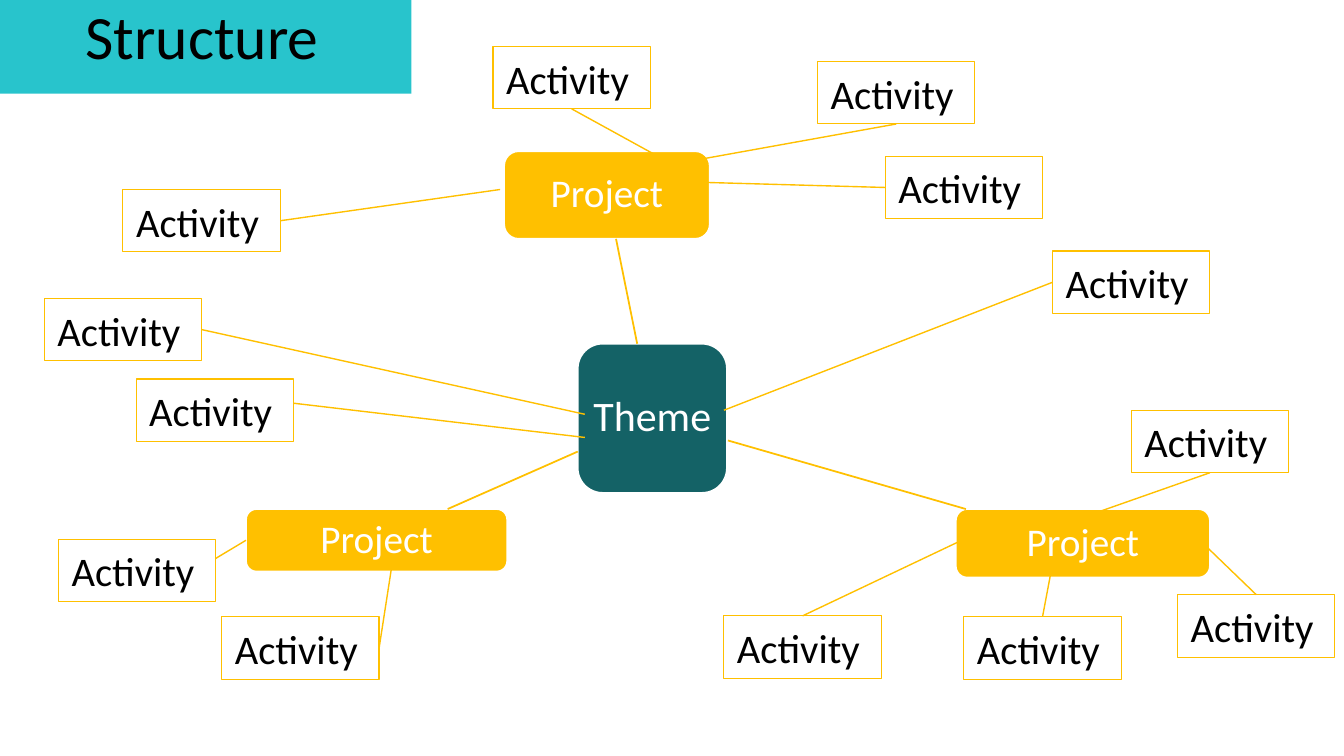
"""Build the Structure slide: a theme with its projects and activities."""
from dataclasses import dataclass
from typing import Optional

from lxml import etree
from pptx import Presentation
from pptx import util as u
from pptx.dml.color import RGBColor
from pptx.enum import shapes, text
from pptx.oxml.ns import qn
from pptx.shapes.autoshape import Shape
from pptx.shapes.connector import Connector
from pptx.slide import Slide

PX = 9144
AMBER, TEAL, AQUA, WHITE, BLACK = "FFC000", "146266", "28C4CC", "FFFFFF", "000000"
TOP, LEFT, BOTTOM, RIGHT = range(4)
ACTIVITY_W, ACTIVITY_H = 156, 62
SIDE_MIDDLES = {
    TOP: (ACTIVITY_W // 2, 0),
    LEFT: (0, ACTIVITY_H // 2),
    BOTTOM: (ACTIVITY_W // 2, ACTIVITY_H),
    RIGHT: (ACTIVITY_W, ACTIVITY_H // 2),
}


@dataclass(frozen=True)
class Hub:
    """A rounded box for the theme or a project."""
    label: str
    left: int
    top: int
    width: int
    height: int
    fill: str
    size: int


@dataclass(frozen=True)
class Branch:
    """A line from the theme to a project."""
    start: tuple[int, int]
    tip: tuple[int, int]


@dataclass(frozen=True)
class Activity:
    """An activity box and the line that leaves one of its sides."""
    left: int
    top: int
    side: int
    tip: tuple[int, int]
    shift: int = 0
    hub: Optional[int] = None


HUBS = [
    Hub("Theme", 573, 341, 148, 148, TEAL, 30),
    Hub("Project", 500, 150, 204, 87, AMBER, 28),
    Hub("Project", 948, 505, 252, 68, AMBER, 28),
    Hub("Project", 244, 505, 259, 62, AMBER, 28),
]
BRANCHES = [
    Branch((632, 341), (611, 237)),
    Branch((722, 437), (958, 505)),
    Branch((573, 448), (444, 505)),
]
ACTIVITIES = [
    Activity(489, 46, BOTTOM, (667, 163)),
    Activity(811, 61, BOTTOM, (667, 163)),
    Activity(878, 155, LEFT, (700, 181)),
    Activity(122, 188, RIGHT, (496, 188)),
    Activity(44, 296, RIGHT, (580, 411)),
    Activity(135, 376, RIGHT, (580, 434), shift=-7),
    Activity(1044, 249, LEFT, (718, 407)),
    Activity(1168, 590, TOP, (1189, 535)),
    Activity(956, 612, TOP, (1044, 559)),
    Activity(718, 611, TOP, (956, 535)),
    Activity(1122, 407, BOTTOM, (1089, 508)),
    Activity(220, 612, RIGHT, (389, 559)),
    Activity(58, 535, RIGHT, (244, 535), shift=-12, hub=3),
]


def px(length: int) -> u.Emu:
    """Turn px into EMU."""
    return u.Emu(length * PX)


def colour(value: str) -> RGBColor:
    """Turn a hex string into a colour."""
    return RGBColor.from_string(value)


def add_box(slide: Slide, kind: shapes.MSO_SHAPE, left: int, top: int, width: int,
            height: int, fill: Optional[str], outline: Optional[str], weight: float) -> Shape:
    """Add a flat box with the given fill and outline."""
    box = slide.shapes.add_shape(kind, px(left), px(top), px(width), px(height))
    box.shadow.inherit = False
    if fill:
        box.fill.solid()
        box.fill.fore_color.rgb = colour(fill)
    else:
        box.fill.background()
    if outline:
        box.line.color.rgb = colour(outline)
        box.line.width = u.Pt(weight)
    else:
        box.line.fill.background()
    return box


def write(box: Shape, label: str, size: int, ink: str, align: text.PP_ALIGN,
          anchor: text.MSO_ANCHOR, inset_x: int, inset_y: int) -> None:
    """Write one line of text in a box."""
    frame = box.text_frame
    frame.word_wrap = True
    frame.vertical_anchor = anchor
    frame.margin_left = frame.margin_right = px(inset_x)
    frame.margin_top = frame.margin_bottom = px(inset_y)
    paragraph = frame.paragraphs[0]
    paragraph.text = label
    paragraph.alignment = align
    paragraph.font.name = "Calibri"
    paragraph.font.size = u.Pt(size)
    paragraph.font.color.rgb = colour(ink)


def add_line(slide: Slide, start: tuple[int, int], tip: tuple[int, int],
             weight: float) -> Connector:
    """Add a straight amber line."""
    line = slide.shapes.add_connector(
        shapes.MSO_CONNECTOR.STRAIGHT, px(start[0]), px(start[1]), px(tip[0]), px(tip[1]))
    line.line.color.rgb = colour(AMBER)
    line.line.width = u.Pt(weight)
    etree.SubElement(line._element.spPr, qn("a:effectLst"))
    return line


def add_hub(slide: Slide, hub: Hub) -> Shape:
    """Add the theme or a project."""
    box = add_box(slide, shapes.MSO_SHAPE.ROUNDED_RECTANGLE, hub.left, hub.top,
                  hub.width, hub.height, hub.fill, WHITE, 1.25)
    write(box, hub.label, hub.size, WHITE, text.PP_ALIGN.CENTER,
          text.MSO_ANCHOR.MIDDLE, 8, 8)
    box.text_frame.paragraphs[0].line_spacing = 0.9
    return box


def add_activity(slide: Slide, activity: Activity, hubs: list[Shape]) -> None:
    """Add an activity and its line, joined where it meets the middle of a side."""
    box = add_box(slide, shapes.MSO_SHAPE.RECTANGLE, activity.left, activity.top,
                  ACTIVITY_W, ACTIVITY_H, None, AMBER, 0.75)
    write(box, "Activity", 29, BLACK, text.PP_ALIGN.LEFT, text.MSO_ANCHOR.TOP, 13, 7)
    across, down = SIDE_MIDDLES[activity.side]
    start = (activity.left + across, activity.top + down + activity.shift)
    line = add_line(slide, start, activity.tip, 1)
    if not activity.shift:
        line.begin_connect(box, activity.side)
    if activity.hub is not None:
        line.end_connect(hubs[activity.hub], LEFT)


def main() -> None:
    """Build and save the slide."""
    deck = Presentation()
    deck.slide_width, deck.slide_height = u.Inches(13.33), u.Inches(7.5)
    slide = deck.slides.add_slide(deck.slide_layouts[6])
    hubs = [add_hub(slide, hub) for hub in HUBS]
    for branch in BRANCHES:
        add_line(slide, branch.start, branch.tip, 1.25)
    for activity in ACTIVITIES:
        add_activity(slide, activity, hubs)
    title = add_box(slide, shapes.MSO_SHAPE.RECTANGLE, -7, -9, 415, 102, AQUA, None, 0)
    write(title, "Structure", 44, BLACK, text.PP_ALIGN.CENTER, text.MSO_ANCHOR.TOP, 13, 7)
    deck.save("out.pptx")


if __name__ == "__main__":
    main()
